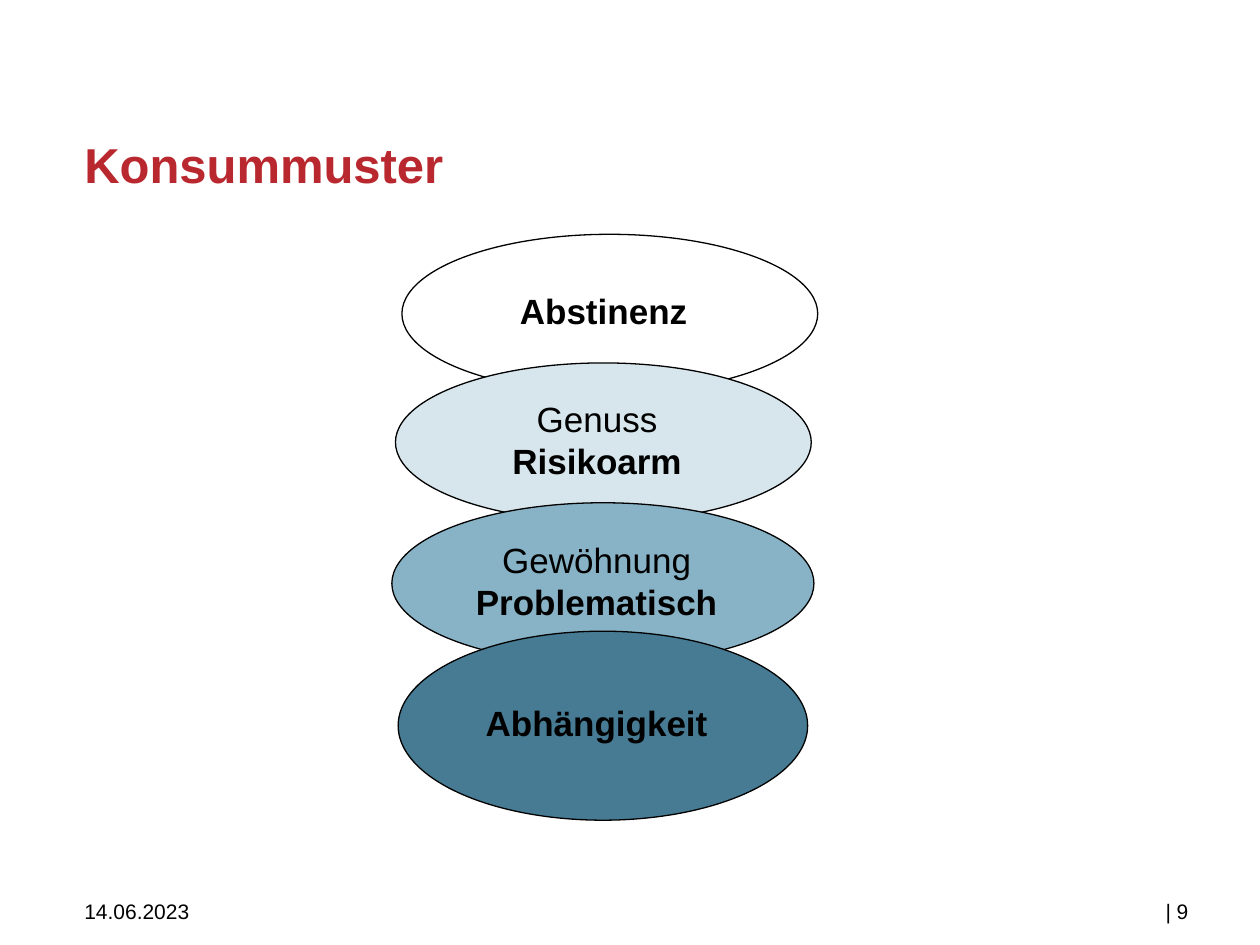
from pptx import Presentation
from pptx.dml.color import RGBColor
from pptx.enum import shapes, text
from pptx.util import Pt

COLORS = {
    "title": "B9282E",
    "ink": "000000",
    "low_risk": "D7E6EC",
    "problematic": "88B3C6",
    "dependent": "467B93",
}
FONT = "Arial"

# Box, fill and (wording, bold) lines of each stage, from back to front
STAGES = [
    ((229.7, 133.9, 237.6, 90.7), None, [("Abstinenz", True)]),
    ((226, 207.4, 237.6, 90.7), "low_risk",
     [("Genuss", False), ("Risikoarm", True)]),
    ((223.9, 287.3, 241.2, 92.2), "problematic",
     [("Gewöhnung", False), ("Problematisch", True)]),
    ((227.5, 360.7, 234, 108), "dependent", [("Abhängigkeit", True)]),
]


def color(name):
    return RGBColor.from_string(COLORS[name])


def points(values):
    return [Pt(value) for value in values]


def set_frame(frame, margins, anchor):
    frame.word_wrap = True
    frame.auto_size = text.MSO_AUTO_SIZE.NONE
    frame.vertical_anchor = anchor
    (frame.margin_left, frame.margin_top,
     frame.margin_right, frame.margin_bottom) = points(margins)


def add_span(para, wording, size, bold=False, ink="ink"):
    span = para.add_run()
    span.text = wording
    span.font.name = FONT
    span.font.size = Pt(size)
    span.font.bold = bold
    span.font.color.rgb = color(ink)


def fill_title(page, box):
    title = page.shapes.title
    title.left, title.top, title.width, title.height = points(box)
    set_frame(title.text_frame, (0, 0, 0, 0), text.MSO_ANCHOR.TOP)
    para = title.text_frame.paragraphs[0]
    para.alignment = text.PP_ALIGN.LEFT
    add_span(para, "Konsummuster", 28, True, "title")


def add_stage(page, box, fill, lines):
    ellipse = page.shapes.add_shape(shapes.MSO_SHAPE.OVAL, *points(box))
    ellipse.shadow.inherit = False
    if fill:
        ellipse.fill.solid()
        ellipse.fill.fore_color.rgb = color(fill)
    else:
        ellipse.fill.background()
    ellipse.line.color.rgb = color("ink")
    ellipse.line.width = Pt(0.75)
    frame = ellipse.text_frame
    set_frame(frame, (0, 0, 7.2, 3.6), text.MSO_ANCHOR.MIDDLE)
    for index, (wording, bold) in enumerate(lines):
        para = frame.add_paragraph() if index else frame.paragraphs[0]
        para.alignment = text.PP_ALIGN.CENTER
        add_span(para, wording, 20, bold)


def add_footer(page, box):
    """Place the date at the left and the page number at the right of the box."""
    left, top, width, height = box
    number_width = 54
    for offset, part_width, wording in (
        (0, 156, "14.06.2023"),
        (width - number_width, number_width, "| 9"),
    ):
        part = page.shapes.add_textbox(
            *points((left + offset, top, part_width, height)))
        set_frame(part.text_frame, (0, 2.2, 0, 0), text.MSO_ANCHOR.TOP)
        add_span(part.text_frame.paragraphs[0], wording, 12)


def main():
    deck = Presentation()
    deck.slide_width, deck.slide_height = points((720, 540))
    page = deck.slides.add_slide(deck.slide_layouts.get_by_name("Title Only"))
    fill_title(page, (48.2, 77, 640.8, 28.8))
    for box, fill, lines in STAGES:
        add_stage(page, box, fill, lines)
    add_footer(page, (48.2, 511.2, 671.8, 28.8))
    deck.save("out.pptx")


if __name__ == "__main__":
    main()
